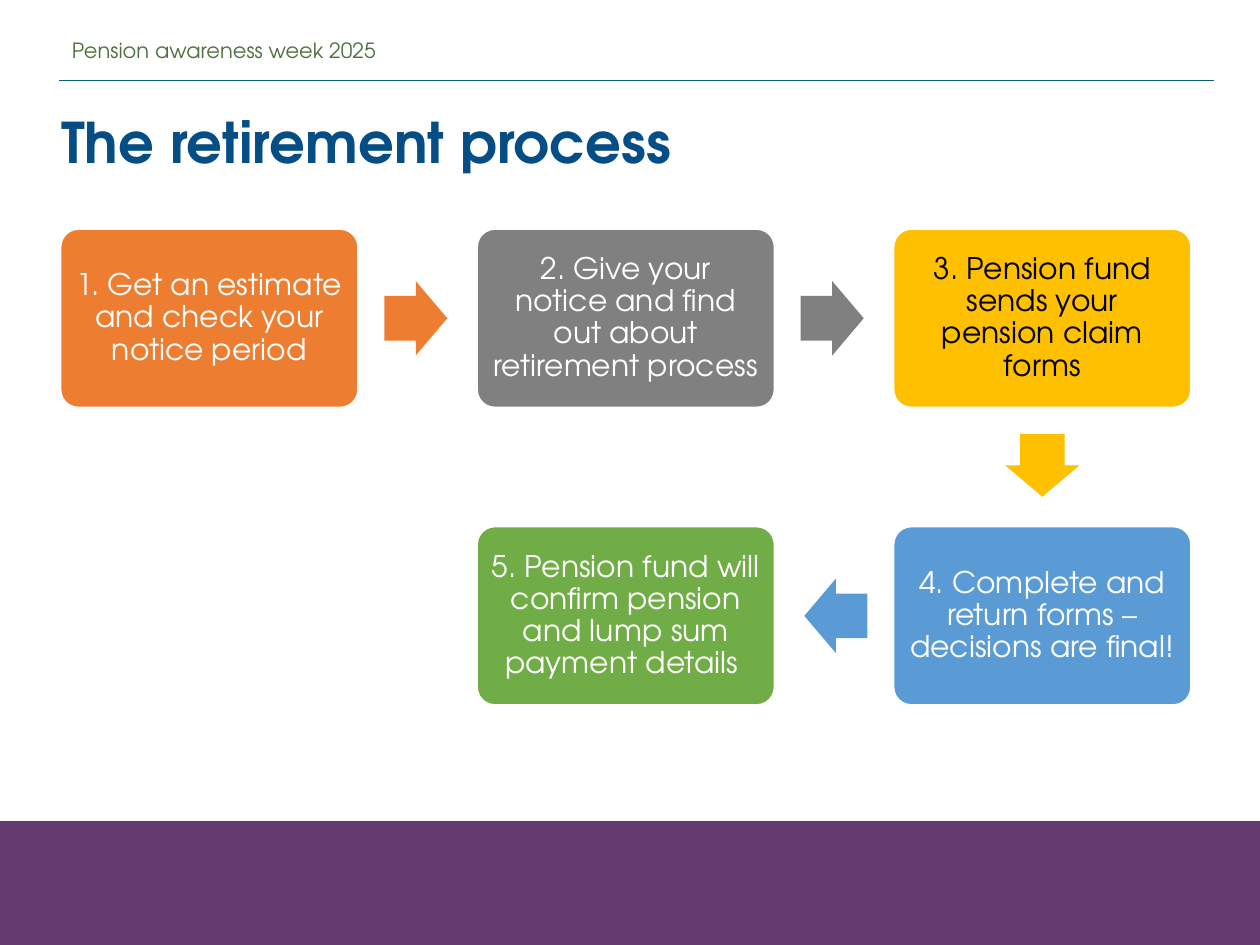
from dataclasses import dataclass

from lxml.etree import SubElement
from pptx import Presentation
from pptx.dml.color import RGBColor
from pptx.enum.shapes import MSO_CONNECTOR as Connector, MSO_SHAPE as Shape
from pptx.enum.text import MSO_ANCHOR as Anchor, PP_ALIGN as Align
from pptx.oxml.ns import qn
from pptx.util import Pt

# Content: text, column, row, fill, text colour, direction of the next step
HEADER = "Pension awareness week 2025"
TITLE = "The retirement process"
STEPS = [
    ("1. Get an estimate and check your notice period", 0, 0, "ED7D31", "FFFFFF", "right"),
    ("2. Give your notice and find out about retirement process", 1, 0, "808080", "FFFFFF", "right"),
    ("3. Pension fund sends your pension claim forms", 2, 0, "FFC000", "000000", "down"),
    ("4. Complete and return forms – decisions are final!", 2, 1, "5B9BD5", "FFFFFF", "left"),
    ("5. Pension fund will confirm pension and lump sum payment details ", 1, 1, "70AD47", "FFFFFF", None),
]


@dataclass(frozen=True)
class Theme:
    font: str = "TeX Gyre Adventor"
    header_size: float = 12
    title_size: float = 32
    step_size: float = 17
    header: str = "4F7040"
    title: str = "044D85"
    rule: str = "0B5E74"
    footer: str = "633B71"
    outline: str = "FFFFFF"


THEME = Theme()

# Layout in points
SLIDE_WIDTH, SLIDE_HEIGHT = 720, 540
FOOTER_TOP = 469.8
GRID_LEFT, GRID_TOP = 34.6, 130.9
BOX_WIDTH, BOX_HEIGHT = 170, 102
COLUMN_PITCH, ROW_PITCH = 238, 170
BOX_INSET = 5  # the rounded corners add about 3 more
ARROW_WIDTH, ARROW_HEIGHT = 36, 42.5
# Offset from box centre to arrow centre, then rotation
ARROWS = {"right": (118, 0, 0), "down": (0, 84, 90), "left": (-118, 0, 180)}


def add_text(frame, text, size, color, bold=False, align=Align.LEFT, spacing=1.0):
    frame.word_wrap = True
    paragraph = frame.paragraphs[0]
    paragraph.alignment = align
    paragraph.line_spacing = spacing
    run = paragraph.add_run()
    run.text = text
    run.font.name = THEME.font
    run.font.size = Pt(size)
    run.font.bold = bold
    run.font.color.rgb = RGBColor.from_string(color)


def add_block(slide, kind, left, top, width, height, fill, outline=None):
    shape = slide.shapes.add_shape(kind, Pt(left), Pt(top), Pt(width), Pt(height))
    shape.shadow.inherit = False
    shape.fill.solid()
    shape.fill.fore_color.rgb = RGBColor.from_string(fill)
    if outline:
        shape.line.color.rgb = RGBColor.from_string(outline)
        shape.line.width = Pt(1)
    else:
        shape.line.fill.background()
    return shape


def add_step(slide, text, column, row, fill, color, direction):
    left = GRID_LEFT + column * COLUMN_PITCH
    top = GRID_TOP + row * ROW_PITCH
    box = add_block(slide, Shape.ROUNDED_RECTANGLE, left, top,
                    BOX_WIDTH, BOX_HEIGHT, fill, THEME.outline)
    box.adjustments[0] = 0.1
    frame = box.text_frame
    frame.margin_left = frame.margin_right = Pt(BOX_INSET)
    frame.margin_top = frame.margin_bottom = Pt(BOX_INSET)
    frame.vertical_anchor = Anchor.MIDDLE
    add_text(frame, text, THEME.step_size, color, align=Align.CENTER, spacing=0.9)

    if direction:
        shift_x, shift_y, rotation = ARROWS[direction]
        arrow = add_block(slide, Shape.RIGHT_ARROW,
                          left + (BOX_WIDTH - ARROW_WIDTH) / 2 + shift_x,
                          top + (BOX_HEIGHT - ARROW_HEIGHT) / 2 + shift_y,
                          ARROW_WIDTH, ARROW_HEIGHT, fill)
        arrow.adjustments[0] = 0.6
        arrow.adjustments[1] = 0.5
        arrow.rotation = rotation


def main():
    presentation = Presentation()
    presentation.slide_width, presentation.slide_height = Pt(SLIDE_WIDTH), Pt(SLIDE_HEIGHT)
    slide = presentation.slides.add_slide(presentation.slide_layouts[6])

    # Footer band
    add_block(slide, Shape.RECTANGLE, 0, FOOTER_TOP, SLIDE_WIDTH,
              SLIDE_HEIGHT - FOOTER_TOP, THEME.footer, THEME.footer)

    # Header rule
    rule = slide.shapes.add_connector(Connector.STRAIGHT, Pt(34), Pt(46), Pt(694), Pt(46))
    rule.line.color.rgb = RGBColor.from_string(THEME.rule)
    rule.line.width = Pt(0.5)
    SubElement(rule._element.spPr, qn("a:effectLst"))

    # Header and title
    header = slide.shapes.add_textbox(Pt(34), Pt(19.5), Pt(469), Pt(18))
    add_text(header.text_frame, HEADER, THEME.header_size, THEME.header, spacing=0.9)
    title = slide.shapes.add_textbox(Pt(28), Pt(57.6), Pt(672), Pt(46))
    add_text(title.text_frame, TITLE, THEME.title_size, THEME.title, bold=True)

    # Process steps
    for step in STEPS:
        add_step(slide, *step)

    presentation.save("out.pptx")


if __name__ == "__main__":
    main()
